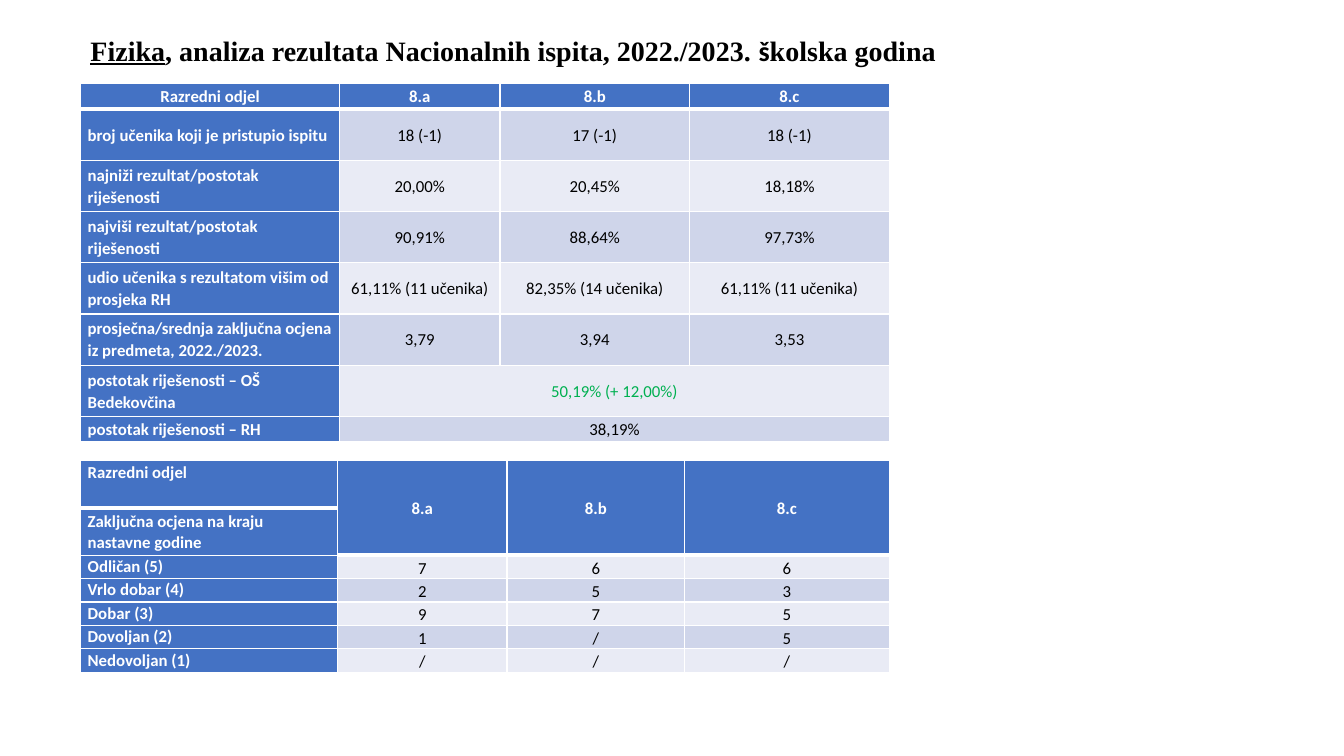
import pptx
import pptx.dml.color
import pptx.enum.text
import pptx.oxml
import pptx.oxml.ns
import pptx.util
from dataclasses import dataclass

Cm = pptx.util.Cm
Pt = pptx.util.Pt
ALIGN = pptx.enum.text.PP_ALIGN
ANCHOR = pptx.enum.text.MSO_ANCHOR


def rgb(code):
    return pptx.dml.color.RGBColor.from_string(code)


@dataclass(frozen=True)
class Theme:
    header: str = "4472C4"
    bands: tuple = ("E9EBF5", "CFD5EA")
    white: str = "FFFFFF"
    ink: str = "000000"
    gain: str = "00B050"
    title_font: str = "Times New Roman"
    body_font: str = "Calibri"
    title_size: int = 20
    body_size: int = 12
    line_spacing: float = 1.07
    thin: int = 1
    thick: int = 3


class ReportSlide:
    def __init__(self, slide, theme):
        self.slide = slide
        self.theme = theme

    def title(self, left, top, width, height, pieces):
        """Add a heading from (text, font name, underlined) pieces."""
        frame = self.slide.shapes.add_textbox(
            Cm(left), Cm(top), Cm(width), Cm(height)).text_frame
        frame.word_wrap = True
        frame.vertical_anchor = ANCHOR.TOP
        heading = frame.paragraphs[0]
        heading.font.size = Pt(self.theme.title_size)
        heading.font.bold = True
        heading.font.color.rgb = rgb(self.theme.ink)
        for text, font_name, underlined in pieces:
            run = heading.add_run()
            run.text = text
            run.font.name = font_name
            if underlined:
                run.font.underline = True

    def borders(self, cell, bottom):
        properties = cell._tc.get_or_add_tcPr()
        thin = self.theme.thin
        for side, points in (("L", thin), ("R", thin), ("T", thin), ("B", bottom)):
            properties.append(pptx.oxml.parse_xml(
                f'<a:ln{side} {pptx.oxml.ns.nsdecls("a")} w="{Pt(points)}">'
                f'<a:solidFill><a:srgbClr val="{self.theme.white}"/></a:solidFill>'
                f'</a:ln{side}>'))

    def cell(self, cell, text, fill, color, bold, align, anchor, bottom):
        self.borders(cell, bottom)
        cell.fill.solid()
        cell.fill.fore_color.rgb = rgb(fill)
        cell.margin_left = cell.margin_right = Cm(0.18)
        cell.margin_top = cell.margin_bottom = 0
        cell.vertical_anchor = anchor
        cell.text = text
        paragraph = cell.text_frame.paragraphs[0]
        paragraph.alignment = align
        paragraph.line_spacing = self.theme.line_spacing
        paragraph.font.name = self.theme.body_font
        paragraph.font.size = Pt(self.theme.body_size)
        paragraph.font.bold = bold
        paragraph.font.color.rgb = rgb(color)

    def table(self, left, top, widths, heights, rows, merges,
              header_rows=1, anchors=None, aligns=None, colors=None):
        """Fill a banded grid; anchors, aligns and colors hold exceptions by cell."""
        anchors, aligns, colors = anchors or {}, aligns or {}, colors or {}
        theme = self.theme
        grid = self.slide.shapes.add_table(
            len(heights), len(widths), Cm(left), Cm(top),
            Cm(sum(widths)), Cm(sum(heights))).table
        grid.first_row = grid.horz_banding = False
        for column, width in zip(grid.columns, widths):
            column.width = Cm(width)
        for row, height in zip(grid.rows, heights):
            row.height = Cm(height)
        for r in range(len(heights)):
            for c in range(len(widths)):
                heading = r < header_rows or c == 0
                heavy = r == 0 or (r < header_rows and c > 0)
                self.cell(
                    grid.cell(r, c),
                    rows[r][c] if c < len(rows[r]) else "",
                    theme.header if heading else theme.bands[r % 2],
                    colors.get((r, c), theme.white if heading else theme.ink),
                    heading,
                    aligns.get((r, c), ALIGN.CENTER if c else ALIGN.LEFT),
                    anchors.get((r, c), ANCHOR.MIDDLE),
                    theme.thick if heavy else theme.thin)
        for first, last in merges:
            grid.cell(*first).merge(grid.cell(*last))


RESULTS = [
    ["Razredni odjel", "8.a", "8.b", "8.c"],
    ["broj učenika koji je pristupio ispitu", "18 (-1)", "17 (-1)", "18 (-1)"],
    ["najniži rezultat/postotak riješenosti", "20,00%", "20,45%", "18,18%"],
    ["najviši rezultat/postotak riješenosti", "90,91%", "88,64%", "97,73%"],
    ["udio učenika s rezultatom višim od prosjeka RH",
     "61,11% (11 učenika)", "82,35% (14 učenika)", "61,11% (11 učenika)"],
    ["prosječna/srednja zaključna ocjena iz predmeta, 2022./2023.",
     "3,79", "3,94", "3,53"],
    ["postotak riješenosti – OŠ Bedekovčina", "50,19% (+ 12,00%)"],
    ["postotak riješenosti – RH", "38,19%"],
]

GRADES = [
    ["Razredni odjel", "8.a", "8.b", "8.c"],
    ["Zaključna ocjena na kraju nastavne godine"],
    ["Odličan (5)", "7", "6", "6"],
    ["Vrlo dobar (4)", "2", "5", "3"],
    ["Dobar (3)", "9", "7", "5"],
    ["Dovoljan (2)", "1", "/", "5"],
    ["Nedovoljan (1)", "/", "/", "/"],
]


def main():
    deck = pptx.Presentation()
    deck.slide_width, deck.slide_height = Cm(33.87), Cm(19.05)
    theme = Theme()
    report = ReportSlide(deck.slides.add_slide(deck.slide_layouts[6]), theme)
    left = 2.03

    # Exam results by class
    report.table(
        left, 2.11, [6.53, 4.04, 4.78, 5.03], [0.64] + [1.29] * 6 + [0.64],
        RESULTS, merges=[((r, 1), (r, 3)) for r in (6, 7)],
        aligns={(0, 0): ALIGN.CENTER}, colors={(6, 1): theme.gain})

    # Final grades by class
    grade_anchors = {(r, c): ANCHOR.BOTTOM if c else ANCHOR.TOP
                     for r in range(2, 7) for c in range(4)}
    report.table(
        left, 11.61, [6.48, 4.27, 4.47, 5.16], [1.19] * 2 + [0.59] * 5,
        GRADES, merges=[((0, c), (1, c)) for c in (1, 2, 3)], header_rows=2,
        anchors={(0, 0): ANCHOR.TOP, **grade_anchors})

    # Heading
    report.title(left, 0.71, 25.37, 1.88, [
        ("Fizika", theme.title_font, True),
        (", analiza rezultata Nacionalnih ispita, 2022./2023. ",
         theme.title_font, False),
        ("š", theme.body_font, False),
        ("kolska godina", theme.title_font, False),
    ])

    deck.save("out.pptx")


if __name__ == "__main__":
    main()
